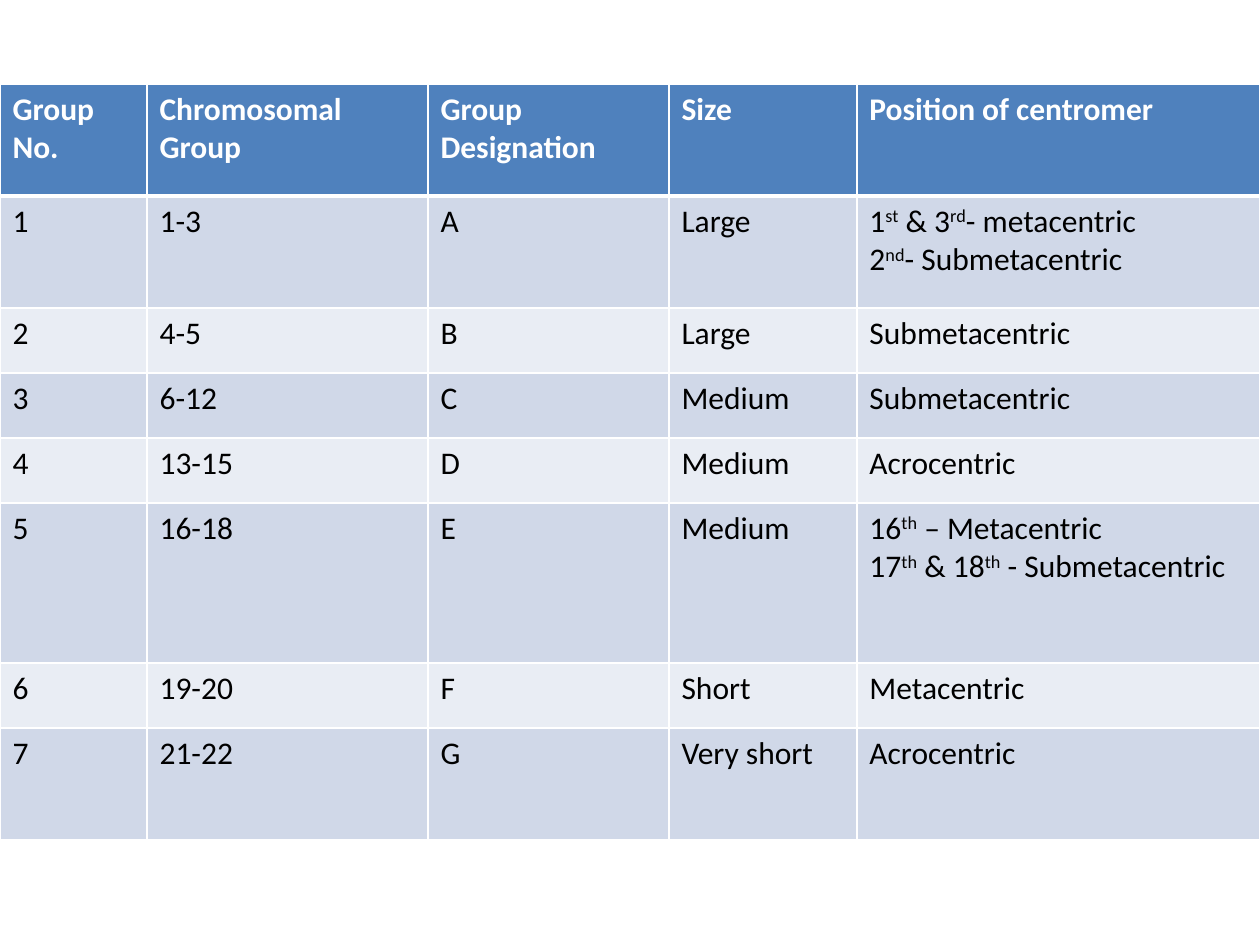
from lxml import etree
from pptx import Presentation
from pptx import util as u
from pptx.dml.color import RGBColor
from pptx.oxml.ns import qn

PX = u.Inches(1) // 126

COLUMNS = [147, 281, 241, 188, 403]
TALL, SHORT, TALLEST = 112, 65, 160
ROW_HEIGHTS = [TALL, TALL, SHORT, SHORT, SHORT, TALLEST, SHORT, TALL]
GROUPS = [
    ["Group No.", "Chromosomal Group", "Group Designation", "Size", "Position of centromer"],
    ["1", "1-3", "A", "Large", "1^st^ & 3^rd^- metacentric\n2^nd^- Submetacentric"],
    ["2", "4-5", "B", "Large", "Submetacentric"],
    ["3", "6-12", "C", "Medium", "Submetacentric"],
    ["4", "13-15", "D", "Medium", "Acrocentric"],
    ["5", "16-18", "E", "Medium", "16^th^ – Metacentric\n17^th^ & 18^th^ - Submetacentric"],
    ["6", "19-20", "F", "Short", "Metacentric"],
    ["7", "21-22", "G", "Very short", "Acrocentric"],
]


def rgb(value):
    return RGBColor.from_string(value)


class Deck:
    font = {"name": "Calibri", "size": u.Pt(18)}
    header_fill, bands, border = "4F81BD", ("D0D8E8", "E9EDF4"), "FFFFFF"

    def __init__(self, width, height):
        self.prs = Presentation()
        self.prs.slide_width, self.prs.slide_height = width * PX, height * PX
        self.s = self.prs.slides.add_slide(self.prs.slide_layouts[6])

    def text(self, tf, content, color, bold):
        """Write one paragraph a line; text between carets is superscript."""
        for i, line in enumerate(content.split("\n")):
            p = tf.paragraphs[0] if i == 0 else tf.add_paragraph()
            for j, part in enumerate(line.split("^")):
                r = p.add_run()
                r.text = part
                for key, value in {**self.font, "bold": bold}.items():
                    setattr(r.font, key, value)
                r.font.color.rgb = rgb(color)
                if j % 2:
                    r._r.get_or_add_rPr().set("baseline", "30000")

    def borders(self, cell, row):
        tcPr = cell._tc.get_or_add_tcPr()
        widths = {"lnL": 1, "lnR": 1, "lnT": 3 if row == 1 else 1, "lnB": 3 if row == 0 else 1}
        for side, points in widths.items():
            ln = etree.SubElement(tcPr, qn(f"a:{side}"), w=str(u.Pt(points)))
            fill = etree.SubElement(ln, qn("a:solidFill"))
            etree.SubElement(fill, qn("a:srgbClr"), val=self.border)

    def table(self, left, top, columns, heights, rows):
        frame = self.s.shapes.add_table(len(rows), len(columns), left * PX, top * PX,
                                        sum(columns) * PX, sum(heights) * PX)
        table = frame.table
        for column, width in zip(table.columns, columns):
            column.width = width * PX
        for i, (row, height) in enumerate(zip(table.rows, heights)):
            row.height = height * PX
            header = i == 0
            for cell, content in zip(row.cells, rows[i]):
                self.borders(cell, i)
                cell.fill.solid()
                cell.fill.fore_color.rgb = rgb(self.header_fill if header else self.bands[(i - 1) % 2])
                self.text(cell.text_frame, content, "FFFFFF" if header else "000000", header)


def main():
    deck = Deck(1260, 945)
    deck.table(0, 84, COLUMNS, ROW_HEIGHTS, GROUPS)
    deck.prs.save("out.pptx")


if __name__ == "__main__":
    main()
